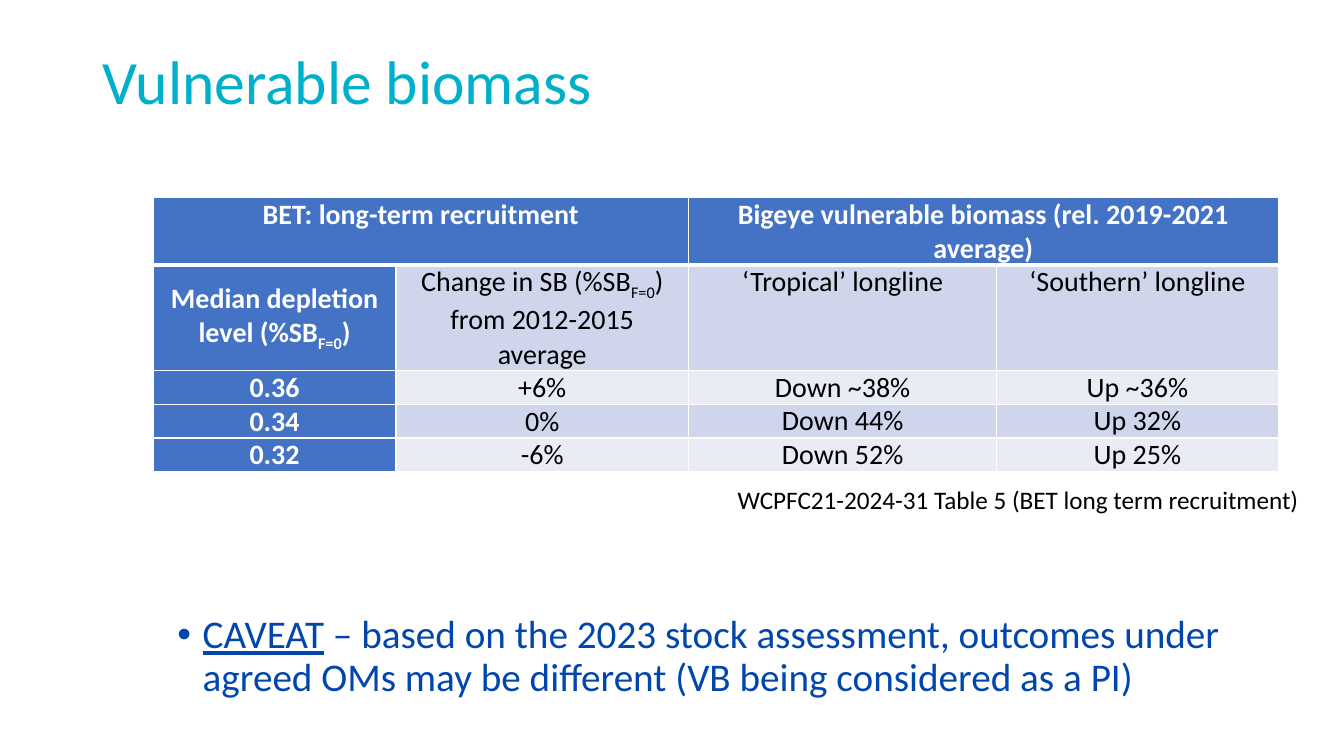
from dataclasses import dataclass

from lxml import etree
from pptx import Presentation
from pptx import util as u
from pptx.dml.color import RGBColor
from pptx.enum import text
from pptx.oxml.ns import qn


@dataclass(frozen=True)
class Theme:
    font: str = "Calibri"
    title: str = "00B0CA"
    caveat: str = "0046AD"
    dark: str = "000000"
    light: str = "FFFFFF"
    header: str = "4472C4"
    bands: tuple = ("E9EBF5", "CFD5EA")
    title_size: int = 44
    caveat_size: int = 28
    table_size: int = 20
    source_size: int = 18


theme = Theme()


def write(para, words, *, size, color, bold=False, underline=False, baseline=None):
    span = para.add_run()
    span.text = words
    font = span.font
    font.name, font.size = theme.font, u.Pt(size)
    font.bold, font.underline = bold, underline
    font.color.rgb = RGBColor.from_string(color)
    if baseline:
        font._element.set("baseline", str(baseline))


def add_box(left, top, width, height):
    """Add a wrapping text box, in centimetres, and return its first paragraph."""
    box = page.shapes.add_textbox(u.Cm(left), u.Cm(top), u.Cm(width), u.Cm(height))
    box.text_frame.word_wrap = True
    return box.text_frame.paragraphs[0]


deck = Presentation()
deck.slide_width, deck.slide_height = u.Cm(33.87), u.Cm(19.05)
page = deck.slides.add_slide(deck.slide_layouts[6])

# Title
para = add_box(2.33, 1.17, 29.21, 2.79)
para.line_spacing = 0.9
write(para, "Vulnerable biomass", size=theme.title_size, color=theme.title)

# Biomass table
rows = [
    ["BET: long-term recruitment", "", "Bigeye vulnerable biomass (rel. 2019-2021 average)", ""],
    ["Median depletion level (%SBF=0)", "Change in SB (%SBF=0) from 2012-2015 average",
     "‘Tropical’ longline", "‘Southern’ longline"],
    ["0.36", "+6%", "Down ~38%", "Up ~36%"],
    ["0.34", "0%", "Down 44%", "Up 32%"],
    ["0.32", "-6%", "Down 52%", "Up 25%"],
]
column_widths = [6.12, 7.37, 7.77, 7.09]
row_heights = [1.7, 2.54, 0.85, 0.85, 0.85]
table = page.shapes.add_table(
    len(rows), len(column_widths), u.Cm(3.86), u.Cm(4.98),
    u.Cm(sum(column_widths)), u.Cm(sum(row_heights))).table
table.first_row = table.horz_banding = False
for column, width in zip(table.columns, column_widths):
    column.width = u.Cm(width)
for row, height in zip(table.rows, row_heights):
    row.height = u.Cm(height)
for first in (0, 2):
    table.cell(0, first).merge(table.cell(0, first + 1))

for r, row in enumerate(rows):
    for c, words in enumerate(row):
        cell = table.cell(r, c)
        heading = r == 0 or c == 0
        cell.margin_left = cell.margin_right = u.Cm(0.18)
        cell.margin_top = cell.margin_bottom = 0
        if r == 1 and c < 2:
            cell.vertical_anchor = text.MSO_ANCHOR.MIDDLE
        elif r > 1 and c > 1:
            cell.vertical_anchor = text.MSO_ANCHOR.BOTTOM
        else:
            cell.vertical_anchor = text.MSO_ANCHOR.TOP

        properties = cell._tc.get_or_add_tcPr()
        for side in "LRTB":
            thick = (r, side) in ((0, "B"), (1, "T"))
            line = etree.SubElement(properties, qn(f"a:ln{side}"), w=str(u.Pt(3 if thick else 1)))
            fill = etree.SubElement(line, qn("a:solidFill"))
            etree.SubElement(fill, qn("a:srgbClr"), val=theme.light)
        cell.fill.solid()
        cell.fill.fore_color.rgb = RGBColor.from_string(
            theme.header if heading else theme.bands[r % 2])

        para = cell.text_frame.paragraphs[0]
        para.alignment = text.PP_ALIGN.CENTER
        para.space_after = u.Pt(10)
        for part in filter(None, words.partition("F=0")):
            write(para, part, size=theme.table_size, bold=heading,
                  color=theme.light if heading else theme.dark,
                  baseline=-25000 if part == "F=0" else None)

# Table source
para = add_box(18.34, 12.07, 14.76, 1.02)
write(para, "WCPFC21-2024-31 Table 5 (BET long term recruitment)",
      size=theme.source_size, color=theme.dark)

# Caveat bullet
para = add_box(4.22, 15.37, 27.84, 3.07)
para.line_spacing = 0.9
layout = para._p.get_or_add_pPr()
layout.set("marL", str(u.Cm(0.64)))
layout.set("indent", str(u.Cm(-0.64)))
etree.SubElement(layout, qn("a:buFont"), typeface="Arial")
etree.SubElement(layout, qn("a:buChar"), char="•")
caveat = {"size": theme.caveat_size, "color": theme.caveat}
write(para, "CAVEAT", underline=True, **caveat)
write(para, " – based on the 2023 stock assessment, outcomes under agreed OMs may be "
      "different (VB being considered as a PI)", **caveat)

deck.save("out.pptx")
